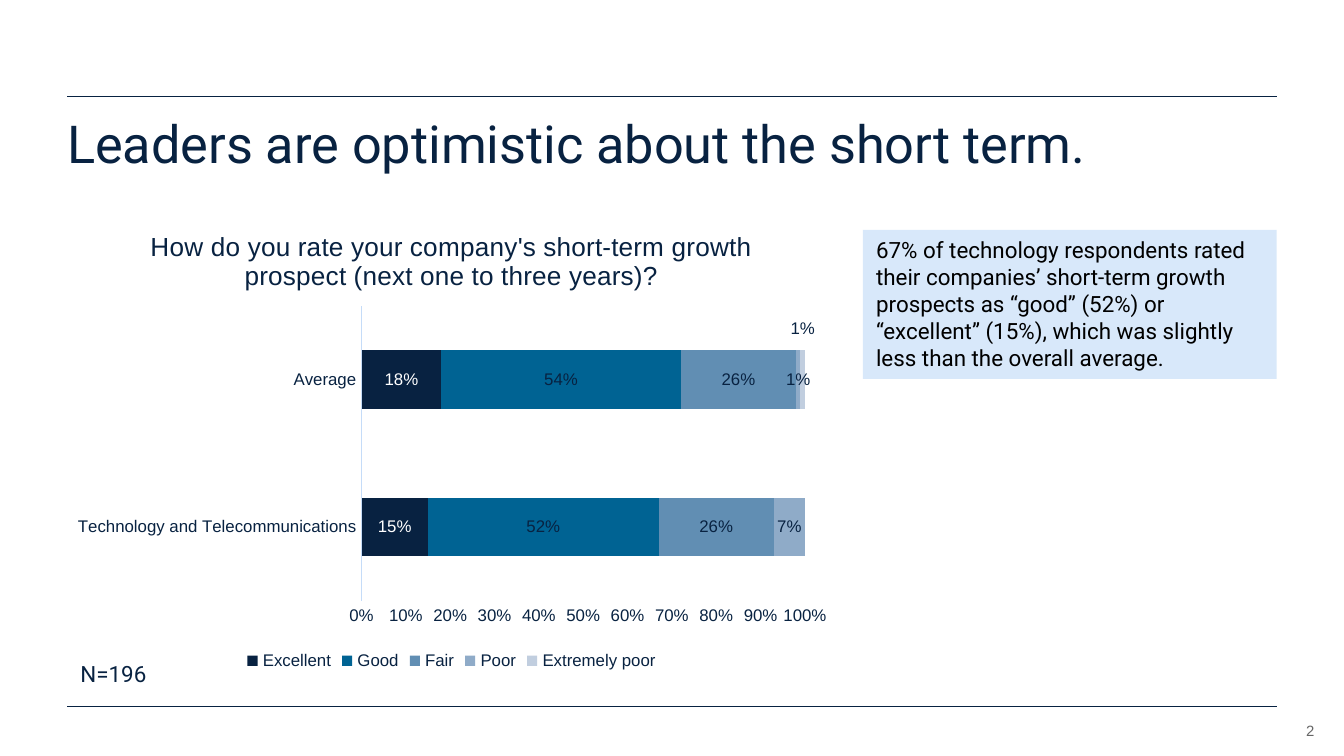
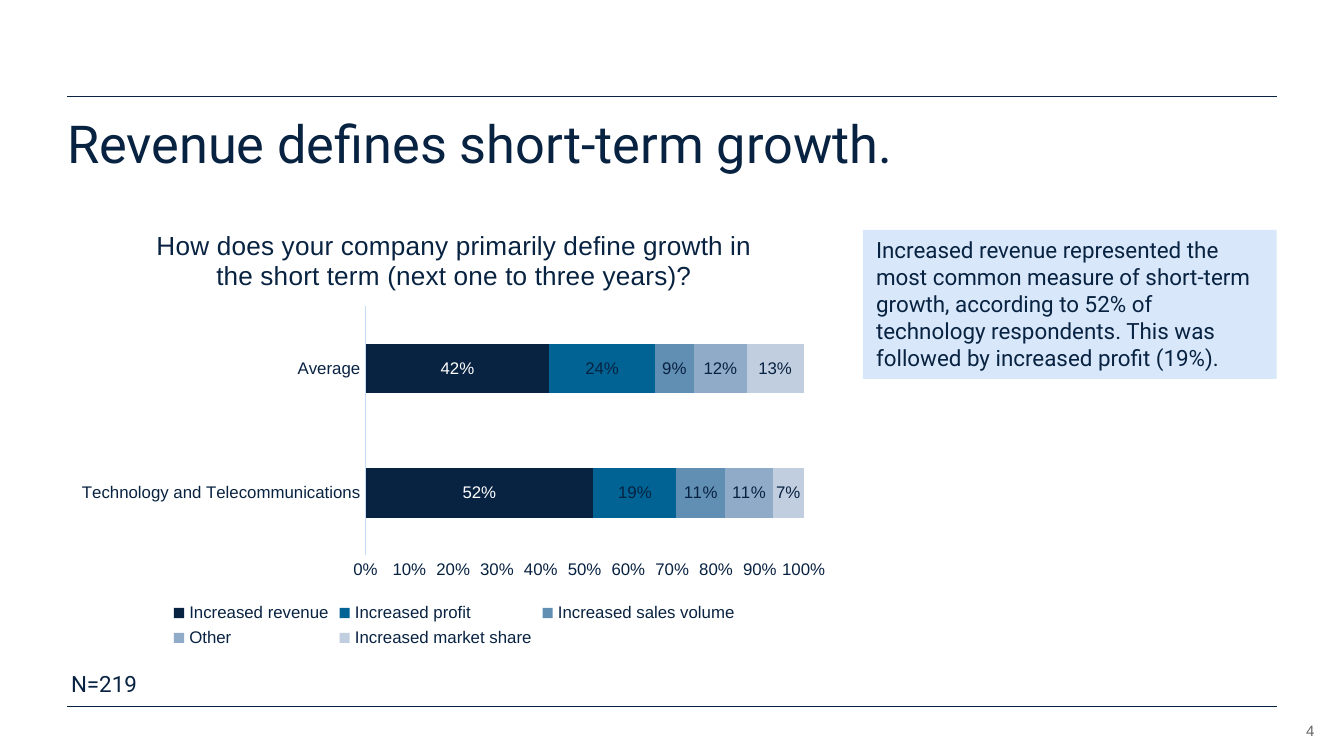
from dataclasses import dataclass
from typing import Optional

import pptx
import pptx.chart.data
import pptx.dml.color
import pptx.enum.chart
import pptx.enum.shapes
import pptx.enum.text
import pptx.oxml
import pptx.oxml.ns
import pptx.util
from lxml import etree
from pptx.util import Inches

C_NS = "http://schemas.openxmlformats.org/drawingml/2006/chart"


@dataclass(frozen=True)
class Theme:
    navy: str = "082241"
    black: str = "000000"
    white: str = "FFFFFF"
    grey: str = "666666"
    callout: str = "D8E8FA"
    axis: str = "C5DCF8"
    bars: tuple[str, ...] = ("082241", "006393", "618EB3", "8FABC8", "C1CEDF")
    text_font: str = "Roboto"
    chart_font: str = "Arial"
    title_size: float = 28
    body_size: float = 12
    chart_title_size: float = 14
    chart_size: float = 10
    label_size: float = 9
    number_size: float = 8
    rule_width: float = 0.5
    axis_width: float = 0.75


THEME = Theme()


@dataclass(frozen=True)
class Box:
    x: float
    y: float
    w: float
    h: float

    def lengths(self) -> tuple[int, ...]:
        return tuple(Inches(v) for v in (self.x, self.y, self.w, self.h))


@dataclass(frozen=True)
class Answer:
    name: str
    technology: Optional[float]
    average: Optional[float]


@dataclass(frozen=True)
class SurveySlide:
    number: str
    title: str
    finding: str
    finding_color: str
    sample: str
    sample_box: Box
    question: str
    chart_box: Box
    plot_box: Box  # where the bars stand on the slide
    answers: tuple[Answer, ...]
    raised_label: Optional[tuple[int, int, float]] = None  # series, point, shift


CATEGORIES = ("Technology and Telecommunications", "Average")
RULES_Y = (0.72, 5.26)
TITLE_BOX = Box(0.5, 0.88, 9, 0.55)
FINDING_BOX = Box(6.42, 1.71, 3.08, 1.11)
NUMBER_BOX = Box(9.31, 5.32, 0.47, 0.18)

SLIDES = (
    SurveySlide(
        number="2",
        title="Leaders are optimistic about the short term.",
        finding="67% of technology respondents rated their companies’ short-term growth "
                "prospects as “good” (52%) or “excellent” (15%), which was slightly less "
                "than the overall average.",
        finding_color=THEME.black,
        sample="N=196",
        sample_box=Box(0.5, 4.86, 1.65, 0.3),
        question="How do you rate your company's short-term growth prospect "
                 "(next one to three years)?",
        chart_box=Box(0.46, 1.55, 5.8, 3.48),
        plot_box=Box(2.69, 2.28, 3.3, 2.19),
        answers=(
            Answer("Excellent", 0.15, 0.18),
            Answer("Good", 0.52, 0.54),
            Answer("Fair", 0.26, 0.26),
            Answer("Poor", 0.07, 0.01),
            Answer("Extremely poor", None, 0.01),
        ),
        raised_label=(4, 1, -0.11),
    ),
    SurveySlide(
        number="4",
        title="Revenue defines short-term growth.",
        finding="Increased revenue represented the most common measure of short-term "
                "growth, according to 52% of technology respondents. This was followed "
                "by increased profit (19%).",
        finding_color=THEME.navy,
        sample="N=219",
        sample_box=Box(0.43, 4.94, 1.65, 0.3),
        question="How does your company primarily define growth in the short term "
                 "(next one to three years)?",
        chart_box=Box(0.5, 1.55, 5.76, 3.31),
        plot_box=Box(2.72, 2.28, 3.26, 1.85),
        answers=(
            Answer("Increased revenue", 0.52, 0.42),
            Answer("Increased profit", 0.19, 0.24),
            Answer("Increased sales volume", 0.11, 0.09),
            Answer("Other", 0.11, 0.12),
            Answer("Increased market share", 0.07, 0.13),
        ),
    ),
)


def rgb(color: str) -> pptx.dml.color.RGBColor:
    return pptx.dml.color.RGBColor.from_string(color)


def style_font(font, size: float, color: str = THEME.navy,
               name: str = THEME.chart_font) -> None:
    font.size = pptx.util.Pt(size)
    font.name = name
    font.bold = False
    font.color.rgb = rgb(color)


def write(sp, text: str, size: float, color: str = THEME.navy,
          name: str = THEME.text_font, inset: bool = True):
    """Fill a shape with one left-aligned run and return its paragraph."""
    tf = sp.text_frame
    tf.word_wrap = True
    tf.vertical_anchor = pptx.enum.text.MSO_ANCHOR.TOP
    if inset:
        tf.auto_size = pptx.enum.text.MSO_AUTO_SIZE.SHAPE_TO_FIT_TEXT
    else:
        tf.margin_left = tf.margin_right = tf.margin_top = tf.margin_bottom = 0
    p = tf.paragraphs[0]
    p.alignment = pptx.enum.text.PP_ALIGN.LEFT
    r = p.add_run()
    r.text = text
    style_font(r.font, size, color, name)
    return p


def add_frame(s, title: str, number: str) -> None:
    """Draw the rules, title and page number that every slide has."""
    for y in RULES_Y:
        rule = s.shapes.add_connector(pptx.enum.shapes.MSO_CONNECTOR.STRAIGHT,
                                      Inches(0.5), Inches(y), Inches(9.5), Inches(y))
        rule.line.color.rgb = rgb(THEME.navy)
        rule.line.width = pptx.util.Pt(THEME.rule_width)
        etree.SubElement(rule.element.spPr, pptx.oxml.ns.qn("a:effectLst"))

    sp = s.shapes.add_textbox(*TITLE_BOX.lengths())
    p = write(sp, title, THEME.title_size, inset=False)
    p.line_spacing = 0.9

    sp = s.shapes.add_textbox(*NUMBER_BOX.lengths())
    p = write(sp, number, THEME.number_size, THEME.grey, THEME.chart_font, inset=False)
    p.alignment = pptx.enum.text.PP_ALIGN.RIGHT
    sp.text_frame.vertical_anchor = pptx.enum.text.MSO_ANCHOR.BOTTOM


def add_finding(s, text: str, color: str) -> None:
    sp = s.shapes.add_shape(pptx.enum.shapes.MSO_SHAPE.RECTANGLE, *FINDING_BOX.lengths())
    sp.shadow.inherit = False
    sp.fill.solid()
    sp.fill.fore_color.rgb = rgb(THEME.callout)
    sp.line.fill.background()
    write(sp, text, THEME.body_size, color)


def manual_layout(**values: object):
    """Make a c:layout element from the given settings, in schema order."""
    items = "".join(f'<c:{key} val="{value}"/>' for key, value in values.items())
    return pptx.oxml.parse_xml(f'<c:layout xmlns:c="{C_NS}"><c:manualLayout>{items}'
                               "</c:manualLayout></c:layout>")


def place_plot(chart, frame: Box, box: Box) -> None:
    area = chart.plots[0]._element.getparent()
    for old in area.findall(pptx.oxml.ns.qn("c:layout")):
        area.remove(old)
    area.insert(0, manual_layout(
        layoutTarget="inner", xMode="edge", yMode="edge",
        x=(box.x - frame.x) / frame.w, y=(box.y - frame.y) / frame.h,
        w=box.w / frame.w, h=box.h / frame.h))


def raise_label(series, point: int, shift: float) -> None:
    """Move one label up from its bar, without a leader line."""
    label = series.points[point].data_label
    style_font(label.font, THEME.label_size)
    label.position = pptx.enum.chart.XL_LABEL_POSITION.CENTER
    labels = series._element.find(pptx.oxml.ns.qn("c:dLbls"))
    idx = labels.find(pptx.oxml.ns.qn("c:dLbl")).find(pptx.oxml.ns.qn("c:idx"))
    idx.addnext(manual_layout(x=0, y=shift))
    for leader in labels.findall(pptx.oxml.ns.qn("c:showLeaderLines")):
        leader.set("val", "0")


def style_axes(chart) -> None:
    for axis in (chart.category_axis, chart.value_axis):
        axis.has_major_gridlines = False
        axis.major_tick_mark = pptx.enum.chart.XL_TICK_MARK.NONE
        axis.minor_tick_mark = pptx.enum.chart.XL_TICK_MARK.NONE
        style_font(axis.tick_labels.font, THEME.label_size)
    line = chart.category_axis.format.line
    line.color.rgb = rgb(THEME.axis)
    line.width = pptx.util.Pt(THEME.axis_width)
    values = chart.value_axis
    values.format.line.fill.background()
    values.minimum_scale, values.maximum_scale, values.major_unit = 0, 1, 0.1
    values.tick_labels.number_format = "0%"
    values.tick_labels.number_format_is_linked = False


def add_survey_chart(s, survey: SurveySlide) -> None:
    data = pptx.chart.data.CategoryChartData(number_format="0%")
    data.categories = CATEGORIES
    for answer in survey.answers:
        data.add_series(answer.name, (answer.technology, answer.average))
    chart = s.shapes.add_chart(pptx.enum.chart.XL_CHART_TYPE.BAR_STACKED_100,
                               *survey.chart_box.lengths(), data).chart
    style_font(chart.font, THEME.chart_size)

    chart.has_title = True
    r = chart.chart_title.text_frame.paragraphs[0].add_run()
    r.text = survey.question
    style_font(r.font, THEME.chart_title_size)
    chart.chart_title.include_in_layout = False

    chart.has_legend = True
    chart.legend.position = pptx.enum.chart.XL_LEGEND_POSITION.BOTTOM
    chart.legend.include_in_layout = False
    style_font(chart.legend.font, THEME.label_size)
    style_axes(chart)

    plot = chart.plots[0]
    plot.gap_width, plot.overlap = 150, 100
    plot.vary_by_categories = False
    for i, (series, color) in enumerate(zip(plot.series, THEME.bars)):
        series.format.fill.solid()
        series.format.fill.fore_color.rgb = rgb(color)
        labels = series.data_labels
        labels.show_value = True
        labels.number_format = "0%"
        labels.number_format_is_linked = False
        labels.position = pptx.enum.chart.XL_LABEL_POSITION.CENTER
        style_font(labels.font, THEME.label_size, THEME.navy if i else THEME.white)
    if survey.raised_label:
        index, point, shift = survey.raised_label
        raise_label(plot.series[index], point, shift)
    place_plot(chart, survey.chart_box, survey.plot_box)


def main() -> None:
    prs = pptx.Presentation()
    prs.slide_width = Inches(10)
    prs.slide_height = Inches(10) * 9 // 16
    for survey in SLIDES:
        s = prs.slides.add_slide(prs.slide_layouts[6])
        add_frame(s, survey.title, survey.number)
        add_finding(s, survey.finding, survey.finding_color)
        add_survey_chart(s, survey)
        sp = s.shapes.add_textbox(*survey.sample_box.lengths())
        write(sp, survey.sample, THEME.body_size)
    prs.save("out.pptx")


if __name__ == "__main__":
    main()
